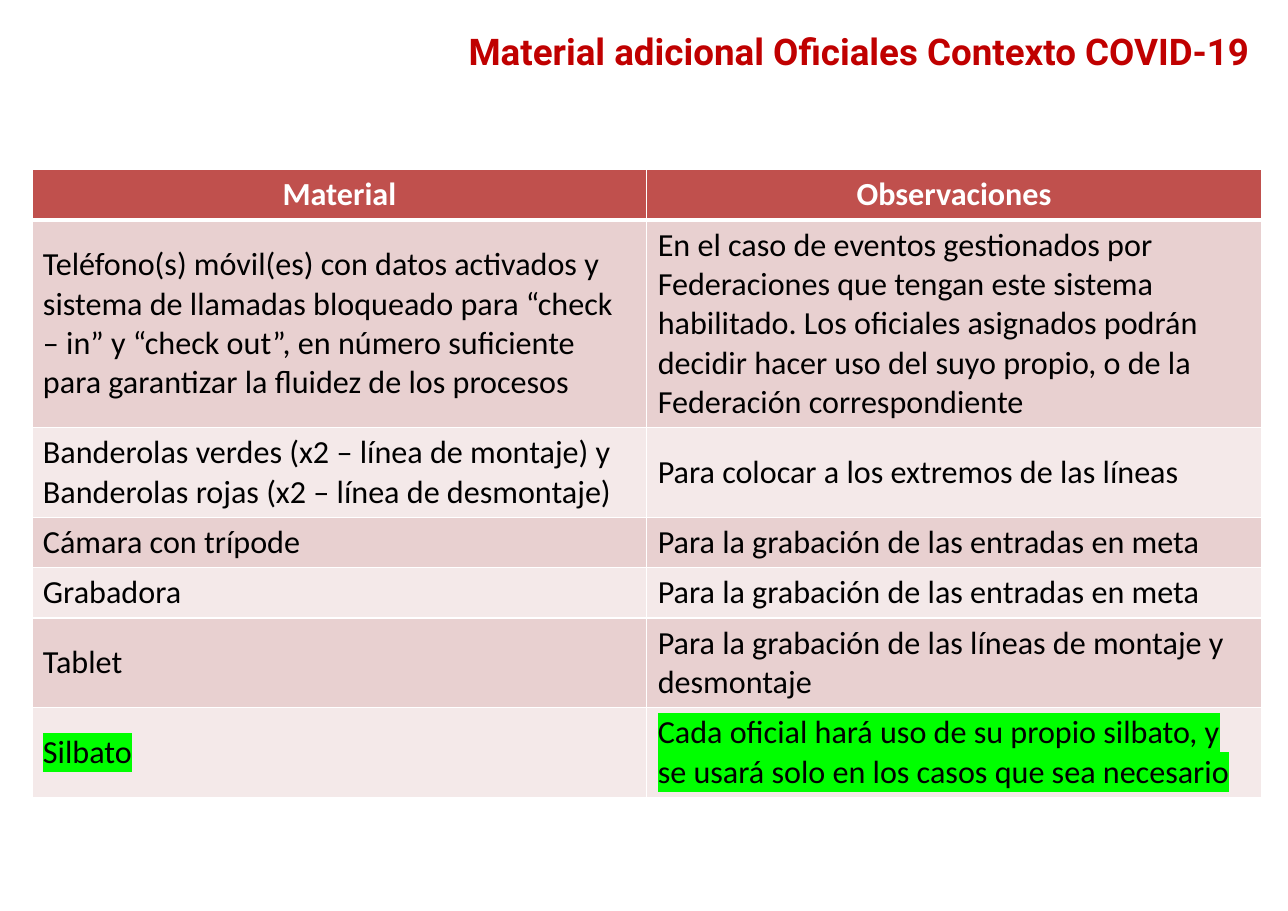
"""Build the slide listing the additional material for officials."""
from lxml.etree import SubElement
from pptx import Presentation
from pptx.dml.color import RGBColor
from pptx.enum.text import MSO_ANCHOR, MSO_AUTO_SIZE, PP_ALIGN
from pptx.oxml.ns import qn
from pptx.util import Pt

TITLE = "Material adicional Oficiales Contexto COVID-19"
HEADERS = ("Material", "Observaciones")
MATERIALS = [
    ("Teléfono(s) móvil(es) con datos activados y sistema de llamadas bloqueado para “check – in” y “check out”, "
     "en número suficiente para garantizar la fluidez de los procesos",
     "En el caso de eventos gestionados por Federaciones que tengan este sistema habilitado. Los oficiales "
     "asignados podrán decidir hacer uso del suyo propio, o de la Federación correspondiente"),
    ("Banderolas verdes (x2 – línea de montaje) y Banderolas rojas (x2 – línea de desmontaje)",
     "Para colocar a los extremos de las líneas"),
    ("Cámara con trípode", "Para la grabación de las entradas en meta"),
    ("Grabadora", "Para la grabación de las entradas en meta"),
    ("Tablet", "Para la grabación de las líneas de montaje y desmontaje"),
    ("Silbato", "Cada oficial hará uso de su propio silbato, y se usará solo en los casos que sea necesario"),
]
HIGHLIGHTED = "Silbato"
WHITE, BLACK, TITLE_RED, HEADER_RED, GREEN = "FFFFFF", "000000", "C00000", "C0504D", "00FF00"
BANDS = ("E8D0D0", "F4E9E9")
COLUMN_WIDTH, ROW_HEIGHT = 401.76, 29.5


def color(value):
    return RGBColor.from_string(value)


def add_run(paragraph, text, font_name, size, text_color, bold, highlight=None):
    run = paragraph.add_run()
    run.text = text
    run.font.size = Pt(size)
    run.font.bold = bold
    run.font.color.rgb = color(text_color)
    if highlight:
        mark = SubElement(run.font._element, qn("a:highlight"))
        SubElement(mark, qn("a:srgbClr"), val=highlight)
    run.font.name = font_name


def add_borders(cell, top, bottom):
    properties = cell._tc.get_or_add_tcPr()
    for side, width in (("L", 1), ("R", 1), ("T", top), ("B", bottom)):
        line = SubElement(properties, qn(f"a:ln{side}"), w=str(Pt(width)))
        fill = SubElement(line, qn("a:solidFill"))
        SubElement(fill, qn("a:srgbClr"), val=WHITE)


def add_title(slide):
    title = slide.shapes.title
    title.left, title.top, title.width, title.height = Pt(257), Pt(12.24), Pt(567.4), Pt(42.5)
    frame = title.text_frame
    frame.word_wrap = True
    frame.auto_size = MSO_AUTO_SIZE.NONE
    frame.vertical_anchor = MSO_ANCHOR.MIDDLE
    frame.margin_left = frame.margin_right = Pt(7.92)
    frame.margin_top = frame.margin_bottom = Pt(4.32)
    paragraph = frame.paragraphs[0]
    paragraph.alignment = PP_ALIGN.RIGHT
    add_run(paragraph, TITLE, "Roboto", 24, TITLE_RED, True)


def add_material_table(slide):
    rows = [HEADERS, *MATERIALS]
    table = slide.shapes.add_table(len(rows), len(HEADERS), Pt(20.88), Pt(110.88),
                                   Pt(COLUMN_WIDTH * len(HEADERS)), Pt(ROW_HEIGHT * len(rows))).table
    for column in table.columns:
        column.width = Pt(COLUMN_WIDTH)
    for row_index, texts in enumerate(rows):
        is_header = row_index == 0
        highlight = GREEN if texts[0] == HIGHLIGHTED else None
        for column_index, text in enumerate(texts):
            cell = table.cell(row_index, column_index)
            add_borders(cell, 3 if row_index == 1 else 1, 3 if is_header else 1)
            cell.fill.solid()
            cell.fill.fore_color.rgb = color(HEADER_RED if is_header else BANDS[(row_index - 1) % 2])
            cell.vertical_anchor = MSO_ANCHOR.MIDDLE
            paragraph = cell.text_frame.paragraphs[0]
            paragraph.alignment = PP_ALIGN.CENTER if is_header else PP_ALIGN.LEFT
            add_run(paragraph, text, "Calibri", 21, WHITE if is_header else BLACK, is_header, highlight)


def main():
    presentation = Presentation()
    presentation.slide_width, presentation.slide_height = Pt(841.68), Pt(595.44)
    slide = presentation.slides.add_slide(presentation.slide_layouts.get_by_name("Title Only"))
    add_title(slide)
    add_material_table(slide)
    presentation.save("out.pptx")


if __name__ == "__main__":
    main()
